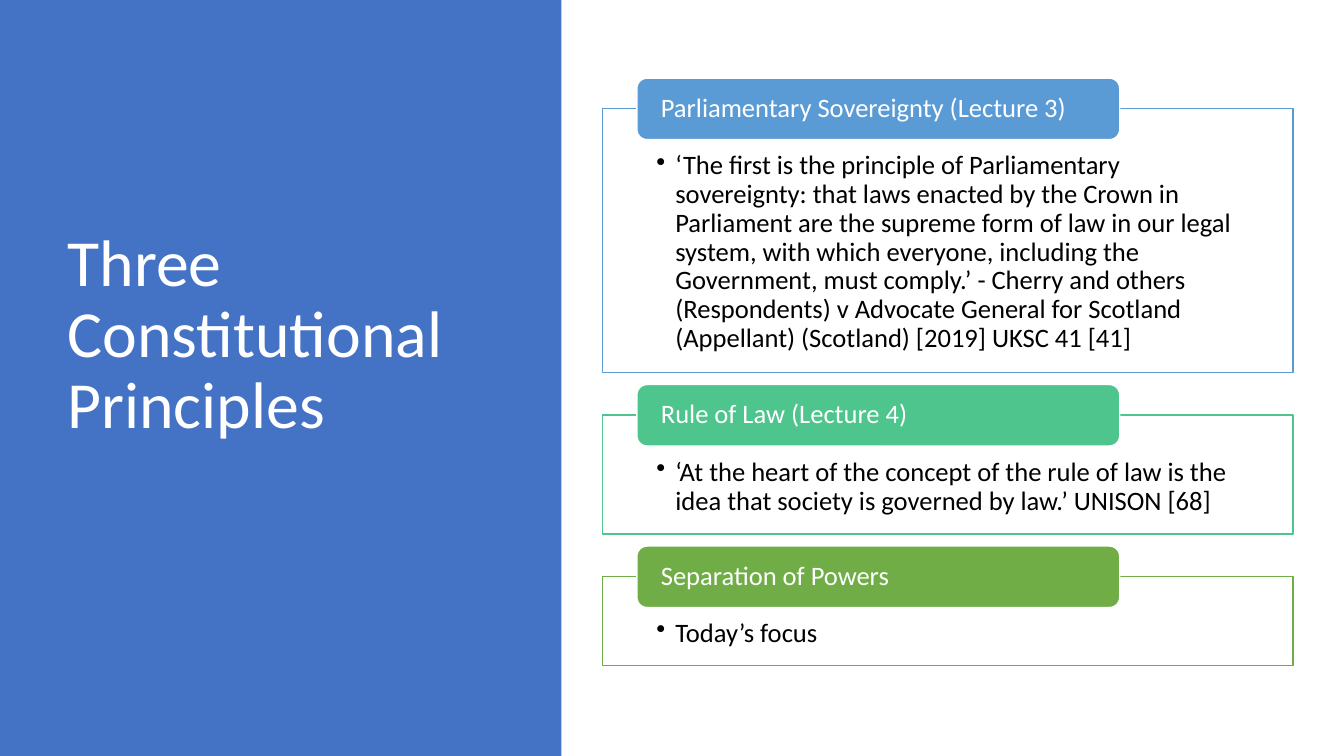
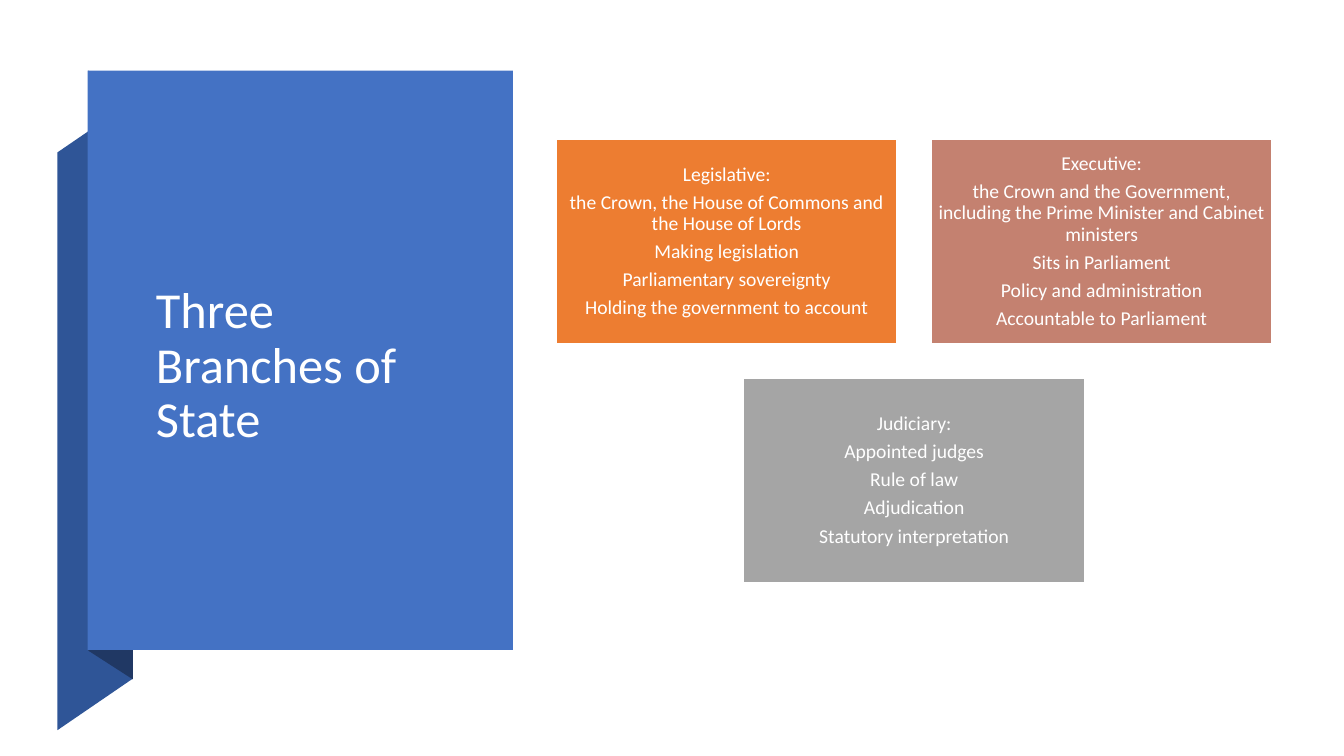
import pptx
import pptx.util
import pptx.dml.color
import pptx.enum.shapes
import pptx.enum.text
import lxml.etree

Cm = pptx.util.Cm
Pt = pptx.util.Pt
RGBColor = pptx.dml.color.RGBColor
SHAPE = pptx.enum.shapes.MSO_SHAPE
ALIGN = pptx.enum.text.PP_ALIGN
ANCHOR = pptx.enum.text.MSO_ANCHOR

FONT = "Calibri"
WHITE = RGBColor(0xFF, 0xFF, 0xFF)
BLACK = RGBColor(0x00, 0x00, 0x00)
BLUE = RGBColor(0x44, 0x72, 0xC4)
DARK_BLUE = RGBColor(0x2F, 0x55, 0x97)
NAVY = RGBColor(0x20, 0x38, 0x64)
SKY = RGBColor(0x5B, 0x9B, 0xD5)
MINT = RGBColor(0x4D, 0xC5, 0x8D)
GREEN = RGBColor(0x70, 0xAD, 0x47)
ORANGE = RGBColor(0xED, 0x7D, 0x31)
ROSE = RGBColor(0xC4, 0x81, 0x70)
GREY = RGBColor(0xA5, 0xA5, 0xA5)


def write(sp, lines, size, color=WHITE, align=ALIGN.LEFT, anchor=ANCHOR.MIDDLE,
          insets=(0.25, 0.13, 0.25, 0.13), after=0, bullet=False):
    tf = sp.text_frame
    tf.word_wrap = True
    tf.auto_size = pptx.enum.text.MSO_AUTO_SIZE.NONE
    tf.vertical_anchor = anchor
    tf.margin_left, tf.margin_top, tf.margin_right, tf.margin_bottom = map(Cm, insets)
    for i, line in enumerate(lines):
        p = tf.paragraphs[0] if i == 0 else tf.add_paragraph()
        if bullet:
            pPr = p._p.get_or_add_pPr()
            pPr.set("marL", str(Cm(0.48)))
            pPr.set("indent", str(-Cm(0.48)))
            bu = lxml.etree.SubElement(pPr, pptx.oxml.ns.qn("a:buChar"))
            bu.set("char", "•")
        p.alignment = align
        p.line_spacing = 0.9
        p.space_after = Pt(after)
        r = p.add_run()
        r.text = line
        r.font.name = FONT
        r.font.size = Pt(size)
        r.font.color.rgb = color


def paint(sp, fill, line=None):
    sp.shadow.inherit = False
    sp.fill.solid()
    sp.fill.fore_color.rgb = fill
    if line is None:
        sp.line.fill.background()
    else:
        sp.line.color.rgb = line
        sp.line.width = Pt(1)


prs = pptx.Presentation()
prs.slide_width = Cm(33.87)
prs.slide_height = Cm(19.05)

ribbon = [
    (DARK_BLUE, [(1.45, 18.4), (3.35, 17.1), (3.35, 2.54), (1.45, 3.84)]),
    (NAVY, [(2.23, 16.4), (3.35, 17.12), (3.35, 2.5), (2.23, 1.78)]),
]
titles = [
    ("Three Constitutional Principles", 47, (0, 0, 14.15, 19.05),
     (1.45, 1.73, 10.57, 15.29), (0.25, 0.13, 0.25, 1.93), []),
    ("Three Branches of State", 36, (2.21, 1.78, 10.72, 14.6),
     (3.68, 4.24, 7.65, 10.01), (0.25, 0.13, 0.25, 0.13), ribbon),
]
slides = []
for text, size, panel_box, title_box, insets, folds in titles:
    s = prs.slides.add_slide(prs.slide_layouts[5])
    for color, points in folds:
        corners = [(Cm(x), Cm(y)) for x, y in points]
        fb = s.shapes.build_freeform(*corners[0], scale=1)
        fb.add_line_segments(corners[1:], close=True)
        paint(fb.convert_to_shape(), color)
    panel = s.shapes.add_shape(SHAPE.RECTANGLE, *map(Cm, panel_box))
    paint(panel, BLUE)
    title = s.shapes.title
    title.left, title.top, title.width, title.height = map(Cm, title_box)
    write(title, [text], size, insets=insets)
    panel.element.addnext(title.element)
    slides.append(s)

principles = [
    ("Parliamentary Sovereignty (Lecture 3)", SKY, 6.65,
     "‘The first is the principle of Parliamentary sovereignty: that laws enacted by "
     "the Crown in Parliament are the supreme form of law in our legal system, with "
     "which everyone, including the Government, must comply.’ - Cherry and others "
     "(Respondents) v Advocate General for Scotland (Appellant) (Scotland) [2019] "
     "UKSC 41 [41]"),
    ("Rule of Law (Lecture 4)", MINT, 3,
     "‘At the heart of the concept of the rule of law is the idea that society is "
     "governed by law.’ UNISON [68]"),
    ("Separation of Powers", GREEN, 2.24, "Today’s focus"),
]
top = 2.74
for name, color, height, text in principles:
    box = slides[0].shapes.add_shape(SHAPE.RECTANGLE, Cm(15.19), Cm(top), Cm(17.4), Cm(height))
    paint(box, WHITE, color)
    write(box, [text], 19, color=BLACK, anchor=ANCHOR.TOP,
          insets=(1.35, 1.09, 1.35, 0.38), bullet=True)
    label = slides[0].shapes.add_shape(SHAPE.ROUNDED_RECTANGLE, Cm(16.05), Cm(top - 0.77),
                                       Cm(12.17), Cm(1.55))
    paint(label, color, WHITE)
    write(label, [name], 19, insets=(0.53, 0, 0.53, 0))
    top += height + 1.07

card_w, card_h, gap = 8.59, 5.16, 0.86
branches = [
    (0, 0, ORANGE, ["Legislative:", "the Crown, the House of Commons and the House of Lords",
                    "Making legislation", "Parliamentary sovereignty",
                    "Holding the government to account"]),
    (1, 0, ROSE, ["Executive:", "the Crown and the Government, including the Prime Minister "
                  "and Cabinet ministers", "Sits in Parliament",
                  "Policy and administration", "Accountable to Parliament"]),
    (0.5, 1, GREY, ["Judiciary:", "Appointed judges", "Rule of law", "Adjudication",
                    "Statutory interpretation"]),
]
for col, row, color, lines in branches:
    card = slides[1].shapes.add_shape(SHAPE.RECTANGLE, Cm(14.02 + col * (card_w + gap)),
                                      Cm(3.51 + row * (card_h + gap)), Cm(card_w), Cm(card_h))
    paint(card, color, WHITE)
    write(card, lines, 14, align=ALIGN.CENTER, insets=(0.15, 0.15, 0.15, 0.15), after=4.9)

prs.save("out.pptx")
